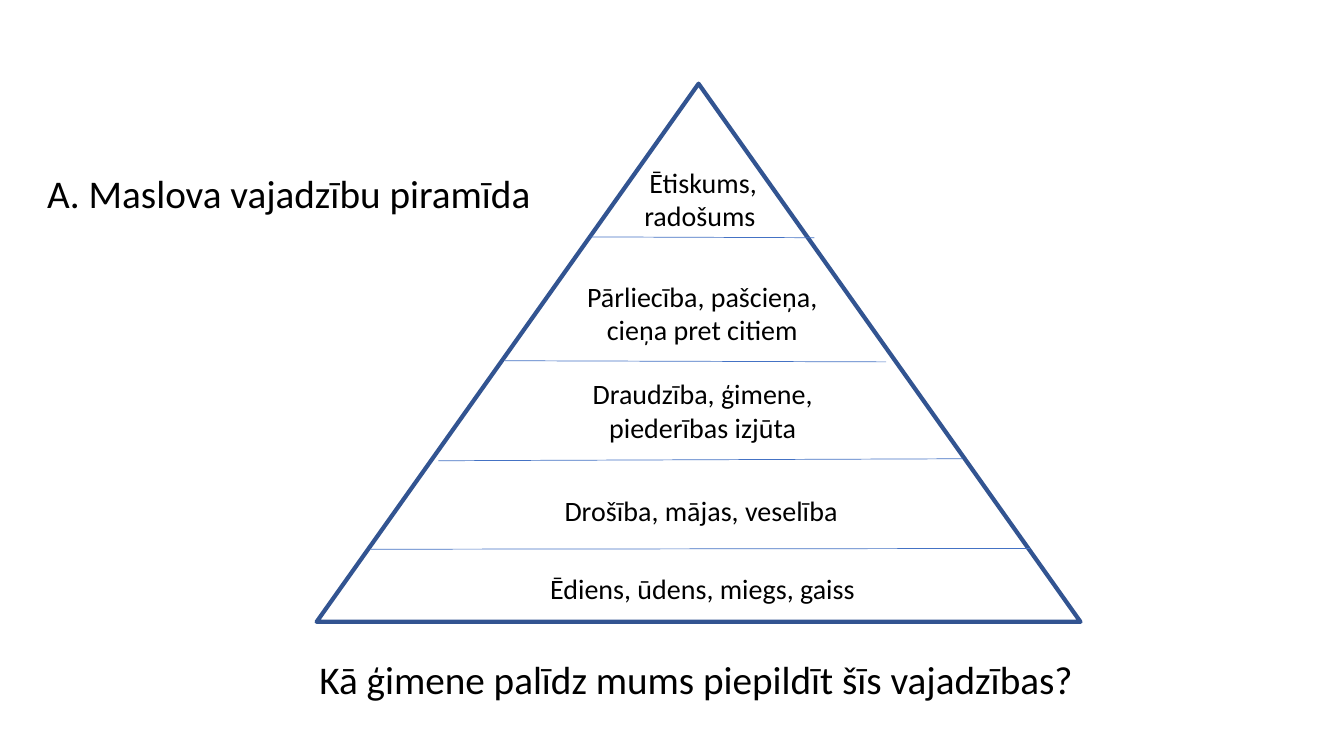
from lxml.etree import SubElement
from pptx import Presentation
from pptx.dml.color import RGBColor
from pptx.enum.shapes import MSO_CONNECTOR, MSO_SHAPE
from pptx.enum.text import MSO_ANCHOR, PP_ALIGN
from pptx.oxml.ns import qn
from pptx.util import Cm, Pt

COLORS = {"text": "000000", "outline": "325491", "divider": "4472C4"}
FONT = "Calibri"

# Lengths in cm: left, top, width, height
HEADING = ("A. Maslova vajadzību piramīda", (0.94, 3.59, 31.55, 2))
QUESTION = ("Kā ģimene palīdz mums piepildīt šīs vajadzības?", (7.8, 16.38, 25.73, 1.45))
PYRAMID = (7.98, 2.11, 19.25, 13.56)

# Needs from the top of the pyramid down: paragraphs, box
NEEDS = [
    (["Ētiskums, radošums "], (15.42, 4.04, 4.6, 1.96)),
    (["Pārliecība, pašcieņa, cieņa pret citiem"], (13.94, 6.91, 7.52, 1.96)),
    (["Draudzība, ģimene,", "piederības izjūta"], (13, 9.37, 9.42, 1.96)),
    (["Drošība, mājas, veselība"], (12.83, 12.32, 9.68, 1.12)),
    (["Ēdiens, ūdens, miegs, gaiss"], (13.11, 14.27, 9.19, 1.12)),
]

# Start x, start y, end x, end y
DIVIDERS = [
    (14.88, 5.97, 20.52, 5.99),
    (12.73, 9.09, 22.33, 9.12),
    (11.05, 11.61, 24.26, 11.56),
    (9.35, 13.84, 25.96, 13.82),
]


def cms(lengths):
    return [Cm(length) for length in lengths]


def set_line(line, color, width):
    line.color.rgb = RGBColor.from_string(COLORS[color])
    line.width = Pt(width)


def add_text(slide, paragraphs, box, size, align=PP_ALIGN.LEFT,
             anchor=MSO_ANCHOR.TOP, spacing=1.0):
    frame = slide.shapes.add_textbox(*cms(box)).text_frame
    frame.word_wrap = True
    frame.vertical_anchor = anchor
    for index, words in enumerate(paragraphs):
        paragraph = frame.add_paragraph() if index else frame.paragraphs[0]
        paragraph.alignment = align
        paragraph.line_spacing = spacing
        run = paragraph.add_run()
        run.text = words
        run.font.name = FONT
        run.font.size = Pt(size)
        run.font.color.rgb = RGBColor.from_string(COLORS["text"])


def add_pyramid(slide):
    pyramid = slide.shapes.add_shape(MSO_SHAPE.ISOSCELES_TRIANGLE, *cms(PYRAMID))
    pyramid.shadow.inherit = False
    pyramid.fill.background()
    set_line(pyramid.line, "outline", 3)
    for ends in DIVIDERS:
        divider = slide.shapes.add_connector(MSO_CONNECTOR.STRAIGHT, *cms(ends))
        set_line(divider.line, "divider", 0.5)
        SubElement(divider._element.spPr, qn("a:effectLst"))
    for paragraphs, box in NEEDS:
        add_text(slide, paragraphs, box, 20, PP_ALIGN.CENTER)


def main():
    deck = Presentation()
    deck.slide_width, deck.slide_height = Cm(33.87), Cm(19.05)
    slide = deck.slides.add_slide(deck.slide_layouts[6])
    heading, heading_box = HEADING
    add_text(slide, [heading], heading_box, 28, anchor=MSO_ANCHOR.BOTTOM, spacing=0.9)
    question, question_box = QUESTION
    add_text(slide, [question], question_box, 28)
    add_pyramid(slide)
    deck.save("out.pptx")


if __name__ == "__main__":
    main()
